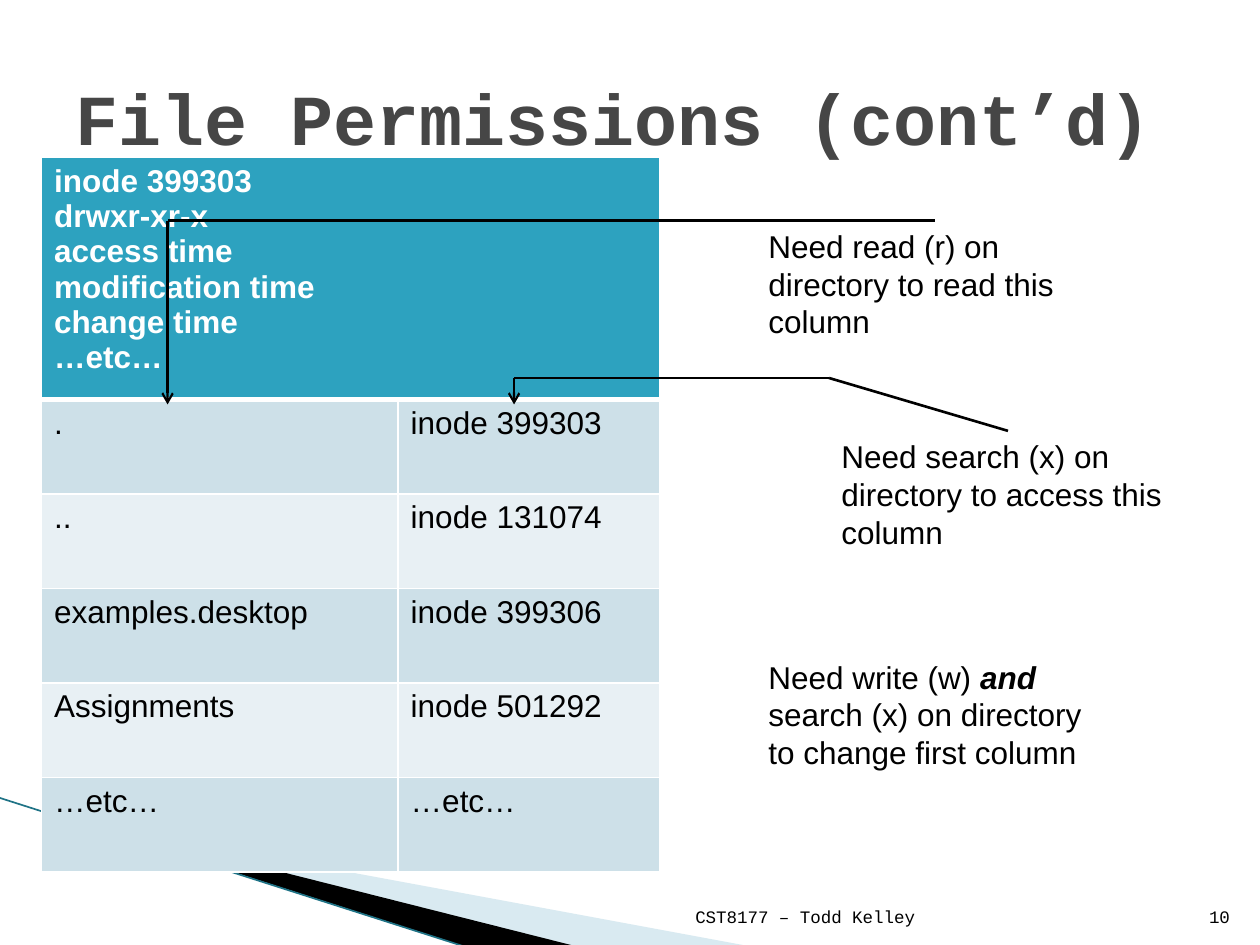
from lxml import etree
from pptx import Presentation
from pptx import util as u
from pptx.dml.color import RGBColor
from pptx.enum import shapes, text
from pptx.oxml.ns import qn

INODE = ["inode 399303", "drwxr-xr-x", "access time", "modification time",
         "change time", "…etc…"]
ENTRIES = [(".", "inode 399303"), ("..", "inode 131074"),
           ("examples.desktop", "inode 399306"),
           ("Assignments", "inode 501292"), ("…etc…", "…etc…")]
NOTES = [
    (6, 1.75, ["Need read (r) on directory to read this column"]),
    (6.58, 3.42, ["Need search (x) on directory to access this column"]),
    (6, 5.17, ["Need write (w) ", "and",
               " search (x) on directory to change first column"]),
]
LINES = [
    ((8, 3.42), (6.58, 3), 1.5, False),
    ((6.58, 3), (4.08, 3), 1.5, False),
    ((7.42, 1.75), (1.33, 1.75), 1.5, False),
    ((1.33, 1.75), (1.33, 3.21), 1.25, True),
    ((4.08, 3), (4.08, 3.21), 1.25, True),
]


def rgb(value):
    """Return the colour for a hex string."""
    return RGBColor.from_string(value)


def style(r, size, font="Arial", color="000000", bold=False, italic=False):
    """Format one run."""
    r.font.size = u.Pt(size)
    r.font.name = font
    r.font.color.rgb = rgb(color)
    r.font.bold = bold
    r.font.italic = italic


def add_text(s, box, parts, size, font="Arial", color="000000", bold=False,
             align=text.PP_ALIGN.LEFT, anchor=text.MSO_ANCHOR.TOP):
    """Add a one-paragraph text box; the second part is emphasised."""
    sp = s.shapes.add_textbox(*map(u.Inches, box))
    tf = sp.text_frame
    tf.word_wrap = True
    tf.vertical_anchor = anchor
    p = tf.paragraphs[0]
    p.alignment = align
    for i, part in enumerate(parts):
        r = p.add_run()
        r.text = part
        style(r, size, font, color, bold or i == 1, i == 1)


def add_line(s, start, end, width, color="000000", arrow=False):
    """Add a straight line, with an open arrowhead at its end if asked."""
    sp = s.shapes.add_connector(shapes.MSO_CONNECTOR.STRAIGHT,
                                *map(u.Inches, start + end))
    sp.line.color.rgb = rgb(color)
    sp.line.width = u.Pt(width)
    if arrow:
        etree.SubElement(sp.line._get_or_add_ln(), qn("a:tailEnd"), type="arrow")
    etree.SubElement(sp._element.spPr, qn("a:effectLst"))


def add_wedge(s, points, color, alpha=100):
    """Add a filled outline without a border."""
    start, *rest = [(u.Inches(x), u.Inches(y)) for x, y in points]
    builder = s.shapes.build_freeform(*start)
    builder.add_line_segments(rest, close=True)
    sp = builder.convert_to_shape()
    sp.shadow.inherit = False
    sp.fill.solid()
    sp.fill.fore_color.rgb = rgb(color)
    sp.line.fill.background()
    if alpha < 100:
        clr = sp._element.spPr.find(".//" + qn("a:srgbClr"))
        etree.SubElement(clr, qn("a:alpha"), val=str(alpha * 1000))


def add_swoosh(s):
    """Add the decoration in the lower left corner."""
    add_wedge(s, [(0.55, 6.51), (5.95, 7.51), (4.56, 7.51), (0.55, 6.5)],
              "A0CBDC", 40)
    add_wedge(s, [(0.53, 6.49), (4.57, 7.51), (3.72, 7.52), (0.54, 6.5)],
              "000000")
    add_line(s, (-0.01, 6.33), (3.71, 7.52), 0.95, "1F7386")


def fill_cell(cell, lines, fill, color="000000", bold=False, bottom=1):
    """Fill one table cell and give it white borders."""
    cell.text_frame.text = "\n".join(lines)
    for p in cell.text_frame.paragraphs:
        for r in p.runs:
            style(r, 18, color=color, bold=bold)
    tc_pr = cell._tc.get_or_add_tcPr()
    for side, width in (("L", 1), ("R", 1), ("T", 1), ("B", bottom)):
        ln = etree.SubElement(tc_pr, qn("a:ln" + side), w=str(u.Pt(width)))
        solid = etree.SubElement(ln, qn("a:solidFill"))
        etree.SubElement(solid, qn("a:srgbClr"), val="FFFFFF")
    cell.fill.solid()
    cell.fill.fore_color.rgb = rgb(fill)


def add_directory(s, box):
    """Add the directory table with its inode header."""
    table = s.shapes.add_table(len(ENTRIES) + 1, 2,
                               *map(u.Inches, box)).table
    for col, width in zip(table.columns, (2.83, 2.08)):
        col.width = u.Inches(width)
    for i, row in enumerate(table.rows):
        row.height = u.Inches(0.75 if i else 1.92)
    table.cell(0, 0).merge(table.cell(0, 1))
    for col in range(2):
        fill_cell(table.cell(0, col), [] if col else INODE, "2DA2BF",
                  "FFFFFF", True, 3)
    for i, entry in enumerate(ENTRIES, 1):
        for j, value in enumerate(entry):
            fill_cell(table.cell(i, j), [value], "CDE0E8" if i % 2 else "E8F0F4")


def add_notes(s):
    """Add the permission notes and the lines to the columns."""
    for x, y, parts in NOTES:
        add_text(s, (x, y, 2.84, 1.01), parts, 18)
    for start, end, width, arrow in LINES:
        add_line(s, start, end, width, arrow=arrow)


def add_footer(s):
    """Add the course name and the slide number."""
    for x, width, value in ((4.79, 2.57, "CST8177 – Todd Kelley"),
                            (9.46, 0.4, "10")):
        add_text(s, (x, 7.01, width, 0.4), [value], 10, "Courier New",
                 align=text.PP_ALIGN.RIGHT, anchor=text.MSO_ANCHOR.BOTTOM)


def main():
    """Build the slide and save it."""
    prs = Presentation()
    prs.slide_width, prs.slide_height = u.Inches(10), u.Inches(7.5)
    s = prs.slides.add_slide(prs.slide_layouts[6])
    add_swoosh(s)
    add_text(s, (0.5, 0.3, 9, 1.25), ["File Permissions (cont’d)"], 41,
             "Courier New", "464646", True, anchor=text.MSO_ANCHOR.MIDDLE)
    add_footer(s)
    add_directory(s, (0.33, 1.25, 4.91, 5.67))
    add_notes(s)


    prs.save("out.pptx")


if __name__ == "__main__":
    main()
